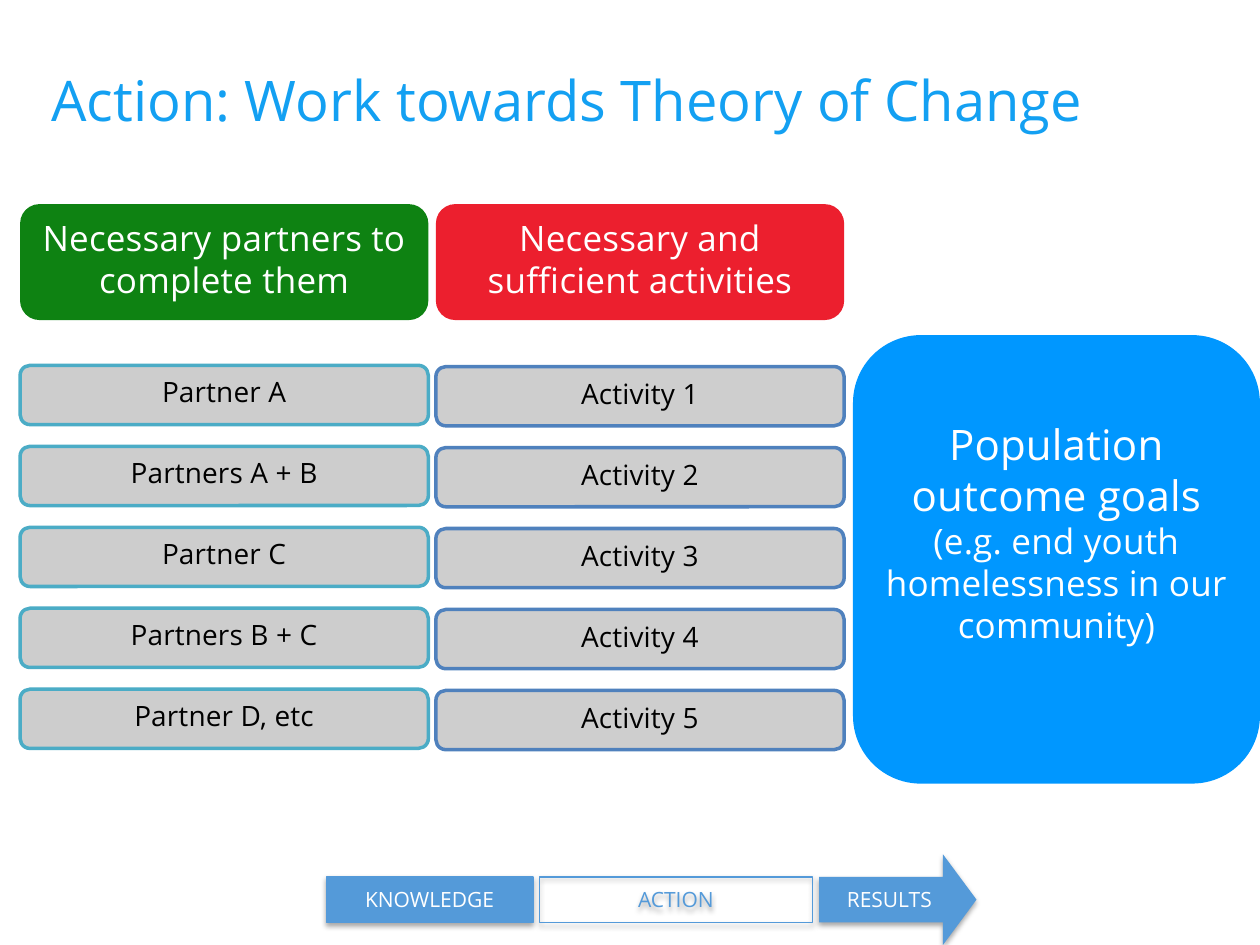
from lxml.etree import SubElement
from pptx import Presentation
from pptx.dml.color import RGBColor
from pptx.enum.shapes import MSO_SHAPE
from pptx.enum.text import MSO_ANCHOR, PP_ALIGN
from pptx.oxml.ns import qn
from pptx.util import Inches, Pt

FONT = "Open Sans"
WHITE = RGBColor(0xFF, 0xFF, 0xFF)
BLACK = RGBColor(0x00, 0x00, 0x00)
TITLE_BLUE = RGBColor(0x13, 0xA0, 0xF2)
GOAL_BLUE = RGBColor(0x00, 0x97, 0xFF)
STEP_BLUE = RGBColor(0x54, 0x9A, 0xD9)
RED = RGBColor(0xEC, 0x1F, 0x2E)
GREEN = RGBColor(0x0E, 0x82, 0x12)
GREY = RGBColor(0xBF, 0xBF, 0xBF)
ACTIVITY_LINE = RGBColor(0x4F, 0x81, 0xBD)
PARTNER_LINE = RGBColor(0x4B, 0xAC, 0xC6)

COLUMN_WIDTH = 3.24
HEADING_TOP = 1.62
HEADING_HEIGHT = 0.92
ROW_HEIGHT = 0.47
ROW_PITCH = 0.6425

PARTNERS = ["Partner A", "Partners A + B", "Partner C", "Partners B + C", "Partner D, etc"]
ACTIVITIES = [f"Activity {number}" for number in range(1, 6)]


def write_text(shape, lines, color, align=PP_ALIGN.CENTER, spacing=None,
               margins=(0.1, 0.05, 0.1, 0.05)):
    """Fill a shape with (text, size) paragraphs; spacing is in 1/100 pt."""
    frame = shape.text_frame
    frame.word_wrap = True
    frame.vertical_anchor = MSO_ANCHOR.MIDDLE
    (frame.margin_left, frame.margin_top,
     frame.margin_right, frame.margin_bottom) = map(Inches, margins)
    for index, (text, size) in enumerate(lines):
        paragraph = frame.paragraphs[0] if index == 0 else frame.add_paragraph()
        paragraph.alignment = align
        run = paragraph.add_run()
        run.text = text
        run.font.name = FONT
        run.font.size = Pt(size)
        run.font.color.rgb = color
        if spacing:
            run.font._element.set("spc", str(spacing))


def add_box(slide, kind, box, fill=None, line=None, line_width=0.75):
    shape = slide.shapes.add_shape(kind, *map(Inches, box))
    shape.shadow.inherit = False
    if fill is None:
        shape.fill.background()
    else:
        shape.fill.solid()
        shape.fill.fore_color.rgb = fill
    if line is None:
        shape.line.fill.background()
    else:
        shape.line.color.rgb = line
        shape.line.width = Pt(line_width)
    return shape


def set_fill_opacity(shape, percent):
    color = shape._element.spPr.find(qn("a:solidFill")).find(qn("a:srgbClr"))
    SubElement(color, qn("a:alpha"), val=str(percent * 1000))


def add_drop_shadow(shape):
    effects = shape._element.spPr.find(qn("a:effectLst"))
    shadow = SubElement(effects, qn("a:outerShdw"), blurRad=str(Pt(3.1)),
                        dist=str(Pt(1.8)), dir="5400000", rotWithShape="0")
    color = SubElement(shadow, qn("a:srgbClr"), val="000000")
    SubElement(color, qn("a:alpha"), val="35000")


def add_title(slide, text):
    title = slide.shapes.add_textbox(Inches(0.31), Inches(0.3), Inches(8.99), Inches(0.97))
    write_text(title, [(text, 32)], TITLE_BLUE, PP_ALIGN.LEFT)


def add_goal(slide):
    goal = add_box(slide, MSO_SHAPE.ROUNDED_RECTANGLE, (6.77, 2.66, 3.23, 3.56), GOAL_BLUE)
    lines = [("Population outcome goals", 24),
             ("(e.g. end youth homelessness in our community)", 20)]
    write_text(goal, lines, WHITE, spacing=10, margins=(0.1, 0.05, 0.1, 0.48))


def add_column(slide, left, heading, heading_fill, rows, rows_top, line, opacity):
    margins = (0.08, 0.05, 0.08, 0.1)
    header = add_box(slide, MSO_SHAPE.ROUNDED_RECTANGLE,
                     (left, HEADING_TOP, COLUMN_WIDTH, HEADING_HEIGHT), heading_fill)
    write_text(header, [(heading, 20)], WHITE, spacing=10, margins=margins)
    for index, text in enumerate(rows):
        box = (left, rows_top + index * ROW_PITCH, COLUMN_WIDTH, ROW_HEIGHT)
        row = add_box(slide, MSO_SHAPE.ROUNDED_RECTANGLE, box, GREY, line, 2)
        set_fill_opacity(row, opacity)
        write_text(row, [(text, 16)], BLACK, spacing=10, margins=margins)


def add_step(slide, kind, box, text, fill, line, text_color):
    step = add_box(slide, kind, box, fill, line)
    add_drop_shadow(step)
    write_text(step, [(text, 12)], text_color)
    return step


def add_progress_bar(slide):
    add_step(slide, MSO_SHAPE.RECTANGLE, (2.59, 6.96, 1.64, 0.36),
             "KNOWLEDGE", STEP_BLUE, STEP_BLUE, WHITE)
    add_step(slide, MSO_SHAPE.RECTANGLE, (4.28, 6.96, 2.17, 0.36),
             "ACTION", None, STEP_BLUE, STEP_BLUE)
    arrow = add_step(slide, MSO_SHAPE.RIGHT_ARROW, (6.5, 6.78, 1.25, 0.72),
                     "RESULTS", STEP_BLUE, None, WHITE)
    arrow.adjustments[1] = 0.37


def main():
    presentation = Presentation()
    presentation.slide_width = Inches(10)
    presentation.slide_height = Inches(7.5)
    slide = presentation.slides.add_slide(presentation.slide_layouts[6])
    add_title(slide, "Action: Work towards Theory of Change")
    add_goal(slide)
    add_column(slide, 3.46, "Necessary and sufficient activities", RED,
               ACTIVITIES, 2.91, ACTIVITY_LINE, 76)
    add_column(slide, 0.16, "Necessary partners to complete them", GREEN,
               PARTNERS, 2.9, PARTNER_LINE, 77)
    add_progress_bar(slide)
    presentation.save("out.pptx")


if __name__ == "__main__":
    main()
